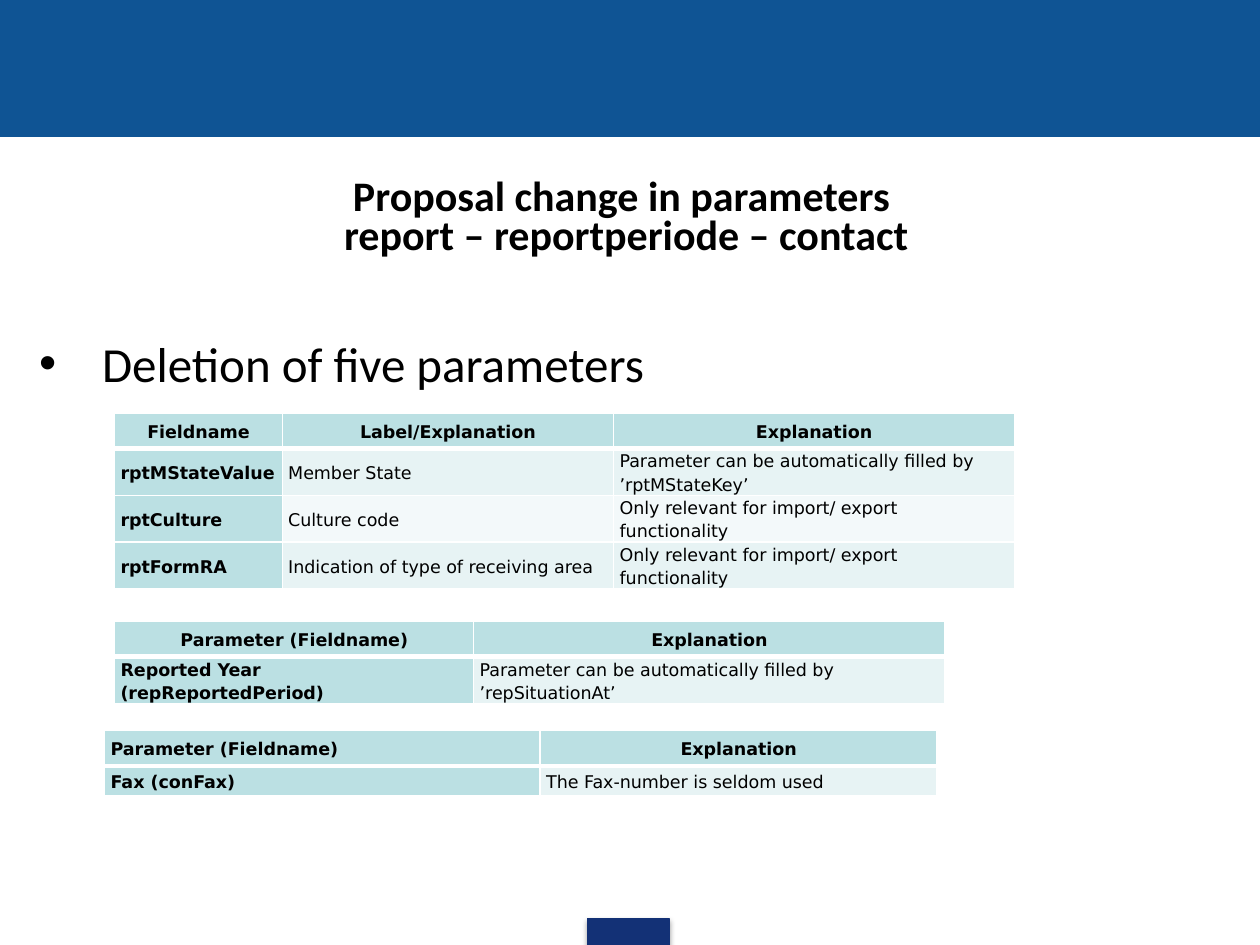
from lxml.etree import SubElement
from pptx import Presentation
from pptx.dml.color import RGBColor
from pptx.enum.shapes import MSO_SHAPE as Shape
from pptx.enum.text import MSO_ANCHOR as Anchor, MSO_AUTO_SIZE as AutoSize, PP_ALIGN as Align
from pptx.oxml.ns import qn
from pptx.util import Cm, Pt

# Content
TITLE = ["Proposal change in parameters ", "report – reportperiode – contact"]
BULLET = "Deletion of five parameters"
# Each table: left, top, column widths, body row height (cm), header alignments, rows
TABLES = [
    dict(left=2.31, top=8.33, widths=[3.38, 6.68, 8.08], row_height=0.94, header="ccc", rows=[
        ["Fieldname", "Label/Explanation", "Explanation"],
        ["rptMStateValue", "Member State", "Parameter can be automatically filled by ’rptMStateKey’"],
        ["rptCulture", "Culture code", "Only relevant for import/ export functionality"],
        ["rptFormRA", "Indication of type of receiving area", "Only relevant for import/ export functionality"],
    ]),
    dict(left=2.31, top=12.53, widths=[7.24, 9.5], row_height=0.94, header="cc", rows=[
        ["Parameter (Fieldname)", "Explanation"],
        ["Reported Year (repReportedPeriod)", "Parameter can be automatically filled by ’repSituationAt’"],
    ]),
    dict(left=2.11, top=14.73, widths=[8.78, 8], row_height=0.6, header="lc", rows=[
        ["Parameter (Fieldname)", "Explanation"],
        ["Fax (conFax)", "The Fax-number is seldom used"],
    ]),
]
HEADER_HEIGHT = 0.71
HEADER_FILL, BAND_FILLS = "BBE0E3", ["E7F3F4", "F3F9FA"]
ALIGNMENTS = {"l": Align.LEFT, "c": Align.CENTER}


def color(value):
    return RGBColor.from_string(value)


def write(paragraph, text, size=10, font="DejaVu Sans", bold=False, align=Align.LEFT, spacing=1.15):
    paragraph.alignment = align
    paragraph.line_spacing = spacing
    paragraph.space_before = Pt(0)
    run = paragraph.add_run()
    run.text = text
    run.font.size, run.font.name, run.font.bold = Pt(size), font, bold
    run.font.color.rgb = color("000000")


def place(placeholder, left, top, width, height):
    placeholder.left, placeholder.top = Cm(left), Cm(top)
    placeholder.width, placeholder.height = Cm(width), Cm(height)
    frame = placeholder.text_frame
    frame.word_wrap, frame.auto_size, frame.vertical_anchor = True, AutoSize.NONE, Anchor.TOP
    frame.margin_left = frame.margin_right = Cm(0.23)
    frame.margin_top = frame.margin_bottom = Cm(0.1)
    return frame


def add_bar(slide, fill, left, top, width, height):
    bar = slide.shapes.add_shape(Shape.RECTANGLE, Cm(left), Cm(top), Cm(width), Cm(height))
    bar.shadow.inherit = False
    bar.fill.solid()
    bar.fill.fore_color.rgb = bar.line.color.rgb = color(fill)
    bar.line.width = Pt(0.75)
    return bar


def add_drop_shadow(shape):
    effects = shape.element.spPr.find(qn("a:effectLst"))
    shadow = SubElement(effects, qn("a:outerShdw"), blurRad=str(Pt(3.1)), dist=str(Pt(1.8)),
                        dir="5400000", rotWithShape="0")
    black = SubElement(shadow, qn("a:srgbClr"), val="000000")
    SubElement(black, qn("a:alpha"), val="35000")


def format_cell(cell, fill, top_border, bottom_border):
    properties = cell._tc.get_or_add_tcPr()
    for side, width in (("lnL", 1), ("lnR", 1), ("lnT", top_border), ("lnB", bottom_border)):
        line = SubElement(properties, qn(f"a:{side}"), w=str(Pt(width)))
        SubElement(SubElement(line, qn("a:solidFill")), qn("a:srgbClr"), val="FFFFFF")
    cell.fill.solid()
    cell.fill.fore_color.rgb = color(fill)
    cell.vertical_anchor = Anchor.MIDDLE
    cell.margin_left = cell.margin_right = Cm(0.12)
    cell.margin_top = cell.margin_bottom = 0


def add_parameter_table(slide, left, top, widths, row_height, header, rows):
    heights = [HEADER_HEIGHT] + [row_height] * (len(rows) - 1)
    table = slide.shapes.add_table(len(rows), len(widths), Cm(left), Cm(top),
                                   Cm(sum(widths)), Cm(sum(heights))).table
    for column, width in zip(table.columns, widths):
        column.width = Cm(width)
    for r, texts in enumerate(rows):
        table.rows[r].height = Cm(heights[r])
        for c, text in enumerate(texts):
            cell = table.cell(r, c)
            heading = r == 0 or c == 0
            fill = HEADER_FILL if heading else BAND_FILLS[(r - 1) % 2]
            format_cell(cell, fill, 3 if r == 1 else 1, 3 if r == 0 else 1)
            write(cell.text_frame.paragraphs[0], text, bold=heading,
                  align=ALIGNMENTS[header[c]] if r == 0 else Align.LEFT)


def main():
    presentation = Presentation()
    presentation.slide_width, presentation.slide_height = Cm(25.4), Cm(19.05)
    slide = presentation.slides.add_slide(presentation.slide_layouts[1])

    # Header band and footer tab
    add_bar(slide, "0F5494", 0, 0, 25.4, 2.75)
    add_drop_shadow(add_bar(slide, "133176", 11.84, 18.52, 1.65, 0.53))

    # Title
    frame = place(slide.shapes.title, 0.56, 3.53, 24.13, 1.8)
    for index, text in enumerate(TITLE):
        paragraph = frame.add_paragraph() if index else frame.paragraphs[0]
        write(paragraph, text, size=24, font="Calibri", bold=True, align=Align.CENTER, spacing=0.78)

    # Bullet
    paragraph = place(slide.placeholders[1], 0.56, 6.88, 24.13, 1.2).paragraphs[0]
    properties = paragraph._p.get_or_add_pPr()
    properties.set("marL", str(Cm(1.27)))
    properties.set("indent", str(Cm(-1.27)))
    SubElement(properties, qn("a:buFont"), typeface="Arial")
    SubElement(properties, qn("a:buChar"), char="•")
    write(paragraph, BULLET, size=28, font="Calibri", spacing=0.78)

    # Tables
    for table in TABLES:
        add_parameter_table(slide, **table)

    presentation.save("out.pptx")


if __name__ == "__main__":
    main()
